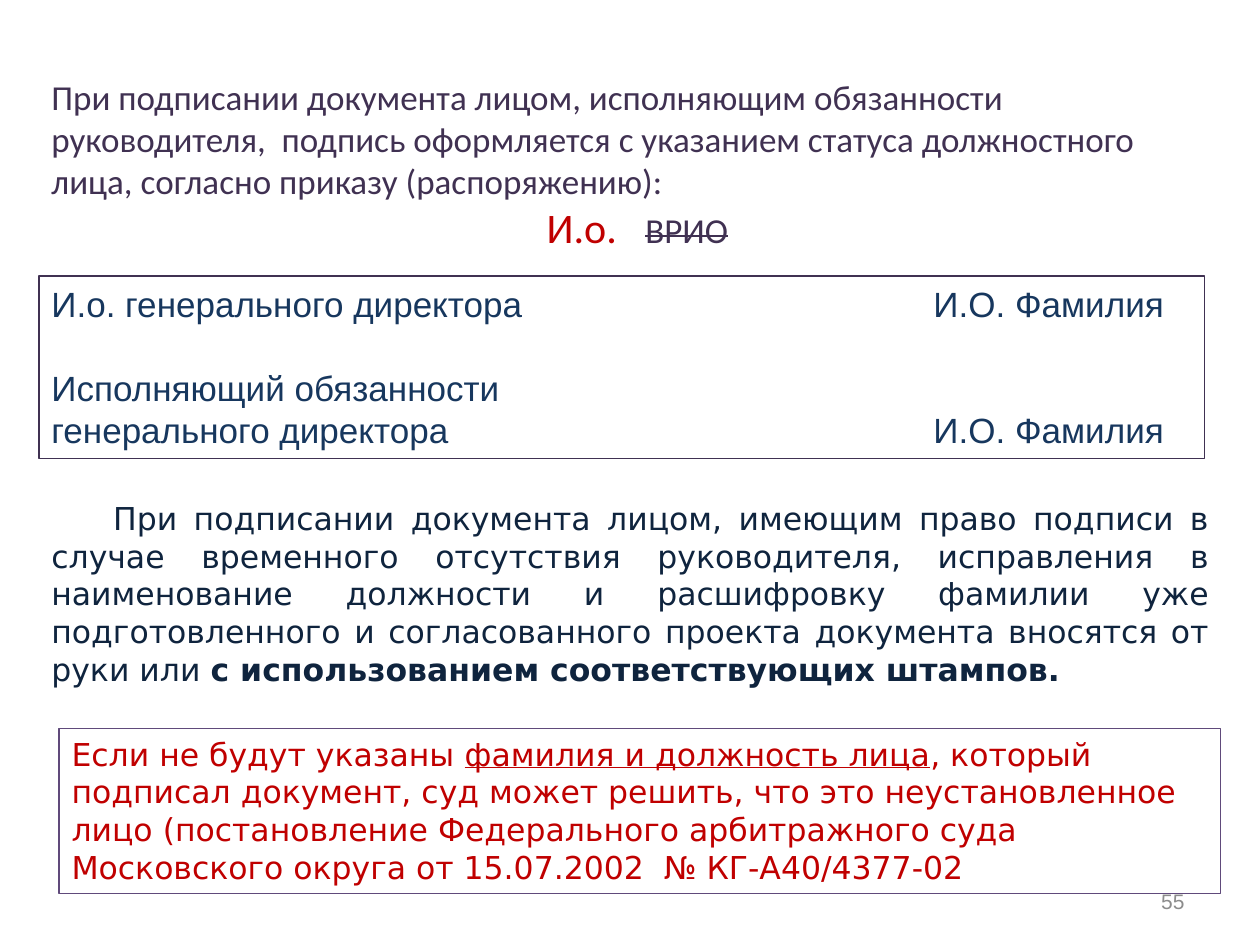
from lxml.etree import SubElement
from pptx import Presentation
from pptx.dml.color import RGBColor
from pptx.enum.shapes import MSO_SHAPE as Shape
from pptx.enum.text import MSO_ANCHOR as Anchor, PP_ALIGN as Align
from pptx.oxml.ns import qn
from pptx.util import Pt

COLORS = {
    "plum": "403152",
    "violet": "604A7B",
    "red": "C00000",
    "blue": "17375E",
    "navy": "0F243E",
    "gray": "8C8C8C",
}
INTRO = {"name": "Calibri", "size": Pt(20), "color": "plum"}
SIGNATURE = {"name": "Arial", "size": Pt(20), "color": "blue"}
BODY = {"name": "DejaVu Sans", "size": Pt(18), "color": "navy"}
WARNING = BODY | {"color": "red"}
ACTING = INTRO | {"size": Pt(24), "color": "red"}
NUMBER = {"name": "Arial", "size": Pt(12), "color": "gray"}
NAME_TAB = Pt(504)


class SlideBuilder:
    def __init__(self, page):
        self.page = page

    def text_box(self, left, top, width, height, anchor=Anchor.TOP):
        box = self.page.shapes.add_textbox(Pt(left), Pt(top), Pt(width), Pt(height))
        return self.prepare(box, anchor)

    def frame(self, left, top, width, height, color, weight):
        """Add an unfilled outlined rectangle that holds text."""
        box = self.page.shapes.add_shape(
            Shape.RECTANGLE, Pt(left), Pt(top), Pt(width), Pt(height))
        box.shadow.inherit = False
        box.fill.background()
        box.line.color.rgb = RGBColor.from_string(COLORS[color])
        box.line.width = Pt(weight)
        return self.prepare(box, Anchor.TOP)

    def prepare(self, box, anchor):
        """Make the box wrap its text and return the text frame."""
        box.text_frame.word_wrap = True
        box.text_frame.vertical_anchor = anchor
        return box.text_frame

    def paragraph(self, text_frame, *spans, tab=None, indent=None, **layout):
        """Fill the empty first paragraph, or add one, with (text, style) spans."""
        para = text_frame.paragraphs[0]
        if para.runs:
            para = text_frame.add_paragraph()
        for key, value in ({"alignment": Align.LEFT} | layout).items():
            setattr(para, key, value)
        properties = para._p.get_or_add_pPr()
        if indent is not None:
            properties.set("indent", str(indent))
        if tab is not None:
            tabs = SubElement(properties, qn("a:tabLst"))
            SubElement(tabs, qn("a:tab"), pos=str(tab), algn="l")
        for text, style in spans:
            self.span(para, text, style)

    def span(self, para, text, style):
        span = para.add_run()
        span.text = text
        for key, value in style.items():
            if key == "color":
                span.font.color.rgb = RGBColor.from_string(COLORS[value])
            elif key in ("strike", "spc"):
                span.font._element.set(key, value)
            else:
                setattr(span.font, key, value)


def main():
    deck = Presentation()
    deck.slide_width, deck.slide_height = Pt(720), Pt(540)
    slide = SlideBuilder(deck.slides.add_slide(deck.slide_layouts[6]))

    intro = slide.text_box(22.3, 39.6, 684, 108.7)
    slide.paragraph(intro, (
        "При подписании документа лицом, исполняющим обязанности руководителя,  "
        "подпись оформляется с указанием статуса должностного лица, "
        "согласно приказу (распоряжению):", INTRO))
    slide.paragraph(
        intro,
        ("И.о.", ACTING),
        (" ", ACTING | {"spc": "1080"}),
        ("ВРИО", INTRO | {"strike": "sngStrike"}),
        alignment=Align.CENTER)

    signatures = slide.frame(22.3, 157.7, 666, 104.4, "plum", 1)
    slide.paragraph(signatures, ("И.о. генерального директора\tИ.О. Фамилия", SIGNATURE),
                    tab=NAME_TAB)
    slide.paragraph(signatures, ("Исполняющий обязанности", SIGNATURE),
                    space_before=Pt(24))
    slide.paragraph(signatures, ("генерального директора\tИ.О. Фамилия", SIGNATURE),
                    tab=NAME_TAB)

    rule = slide.text_box(22.3, 281.5, 676, 116.6)
    slide.paragraph(
        rule,
        ("При подписании документа лицом, имеющим право подписи в случае временного "
         "отсутствия руководителя, исправления в наименование должности и расшифровку "
         "фамилии уже подготовленного и согласованного проекта документа вносятся "
         "от руки или ", BODY),
        ("с использованием соответствующих штампов.", BODY | {"bold": True}),
        alignment=Align.JUSTIFY, indent=Pt(35.3))

    warning = slide.frame(33.8, 416.2, 663.8, 94.3, "violet", 0.75)
    slide.paragraph(
        warning,
        ("Если не будут указаны ", WARNING),
        ("фамилия и должность лица", WARNING | {"underline": True}),
        (", который подписал документ, суд может решить, что это неустановленное лицо "
         "(постановление Федерального арбитражного суда Московского округа "
         "от 15.07.2002  № КГ-А40/4377-02", WARNING))

    number = slide.text_box(516.2, 500.4, 167.8, 28.8, Anchor.MIDDLE)
    slide.paragraph(number, ("55", NUMBER), alignment=Align.RIGHT)

    deck.save("out.pptx")


if __name__ == "__main__":
    main()
